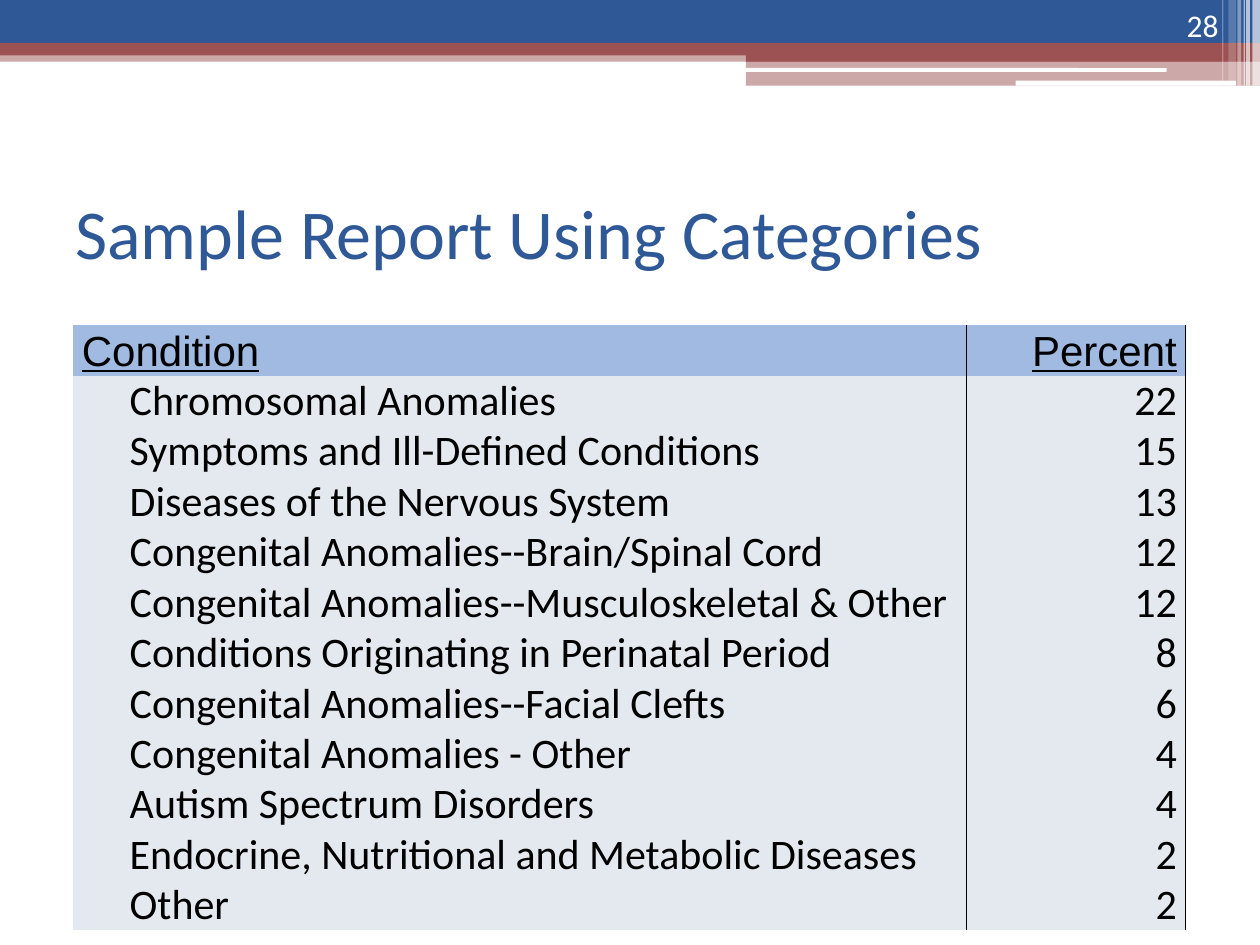
from lxml.etree import SubElement
from pptx import Presentation
from pptx.dml.color import RGBColor
from pptx.enum.shapes import MSO_SHAPE
from pptx.enum.text import MSO_ANCHOR, PP_ALIGN
from pptx.oxml import parse_xml
from pptx.oxml.ns import nsdecls, qn
from pptx.util import Inches, Pt

COLORS = {
    "blue": "2F5897",
    "red": "9C5252",
    "white": "FFFFFF",
    "black": "000000",
    "header": "A0BAE1",
    "body": "E4E9EF",
}


def write(tf, text, size=24, font="Calibri", color="black", align=PP_ALIGN.LEFT,
          underline=False, indent=0):
    p = tf.paragraphs[0]
    p.alignment = align
    if indent:
        p._p.get_or_add_pPr().set("marL", str(Inches(indent)))
    r = p.add_run()
    r.text = text
    r.font.size = Pt(size)
    r.font.name = font
    r.font.underline = underline
    r.font.color.rgb = RGBColor.from_string(COLORS[color])


def set_borders(cell, sides):
    tcPr = cell._tc.get_or_add_tcPr()
    for i, side in enumerate("LRTB"):
        fill = '<a:noFill/>'
        if side in sides:
            fill = f'<a:solidFill><a:srgbClr val="{COLORS["black"]}"/></a:solidFill>'
        tcPr.insert(i, parse_xml(f'<a:ln{side} {nsdecls("a")} w="{Pt(1)}">{fill}</a:ln{side}>'))


prs = Presentation()
prs.slide_width, prs.slide_height = Inches(10), Inches(7.5)
s = prs.slides.add_slide(prs.slide_layouts[6])

RECT, ROUND = MSO_SHAPE.RECTANGLE, MSO_SHAPE.ROUNDED_RECTANGLE
bands = [
    (RECT, 0, 0.4, 10, 0.09, "red", 50),
    (RECT, 0, 0, 10, 0.34, "blue", 100),
    (RECT, 0, 0.34, 10, 0.1, "red", 100),
    (RECT, 5.92, 0.39, 4.08, 0.1, "red", 100),
    (RECT, 5.92, 0.48, 4.08, 0.2, "red", 50),
    (ROUND, 5.91, 0.54, 3.35, 0.03, "white", 100),
    (ROUND, 8.06, 0.64, 1.75, 0.04, "white", 100),
    (RECT, 9.94, 0, 0.06, 0.68, "white", 65),
    (RECT, 9.89, 0, 0.03, 0.68, "white", 65),
    (RECT, 9.87, 0, 0.01, 0.68, "white", 60),
    (RECT, 9.82, 0, 0.03, 0.68, "white", 40),
    (RECT, 9.75, 0, 0.06, 0.64, "white", 20),
    (RECT, 9.7, 0, 0.01, 0.64, "white", 30),
]
for kind, x, y, w, h, color, opacity in bands:
    sp = s.shapes.add_shape(kind, Inches(x), Inches(y), Inches(w), Inches(h))
    sp.shadow.inherit = False
    sp.line.fill.background()
    sp.fill.solid()
    sp.fill.fore_color.rgb = RGBColor.from_string(COLORS[color])
    if opacity < 100:
        clr = sp._element.spPr.find(qn("a:solidFill"))[0]
        SubElement(clr, qn("a:alpha")).set("val", str(opacity * 1000))

labels = [
    ("Sample Report Using Categories", 0.5, 1.25, 9, 1.17, MSO_ANCHOR.MIDDLE,
     dict(size=40, color="blue")),
    ("28", 8.94, 0, 0.83, 0.4, MSO_ANCHOR.BOTTOM,
     dict(size=18, color="white", align=PP_ALIGN.RIGHT)),
]
for text, x, y, w, h, anchor, fmt in labels:
    tf = s.shapes.add_textbox(Inches(x), Inches(y), Inches(w), Inches(h)).text_frame
    tf.word_wrap = True
    tf.vertical_anchor = anchor
    write(tf, text, **fmt)

rows = [
    ("Condition", "Percent"),
    ("Chromosomal Anomalies", "22"),
    ("Symptoms and Ill-Defined Conditions", "15"),
    ("Diseases of the Nervous System", "13"),
    ("Congenital Anomalies--Brain/Spinal Cord", "12"),
    ("Congenital Anomalies--Musculoskeletal & Other", "12"),
    ("Conditions Originating in Perinatal Period", "8"),
    ("Congenital Anomalies--Facial Clefts", "6"),
    ("Congenital Anomalies - Other", "4"),
    ("Autism Spectrum Disorders", "4"),
    ("Endocrine, Nutritional and Metabolic Diseases", "2"),
    ("Other", "2"),
]
table = s.shapes.add_table(len(rows), 2, Inches(0.58), Inches(2.58),
                           Inches(8.83), Inches(4.8)).table
table.columns[0].width, table.columns[1].width = Inches(7.09), Inches(1.74)
for i, row in enumerate(rows):
    header = i == 0
    table.rows[i].height = Inches(0.36 if header else 0.4)
    for j, text in enumerate(row):
        cell = table.cell(i, j)
        cell.margin_left = cell.margin_right = Inches(0.07)
        cell.margin_top = cell.margin_bottom = 0
        cell.vertical_anchor = MSO_ANCHOR.BOTTOM
        cell.fill.solid()
        cell.fill.fore_color.rgb = RGBColor.from_string(COLORS["header" if header else "body"])
        set_borders(cell, "LR" if j else "R")
        write(cell.text_frame, text,
              font="Arial" if header else "Calibri",
              underline=header,
              align=PP_ALIGN.RIGHT if j else PP_ALIGN.LEFT,
              indent=0 if header or j else 0.38)

prs.save("out.pptx")
